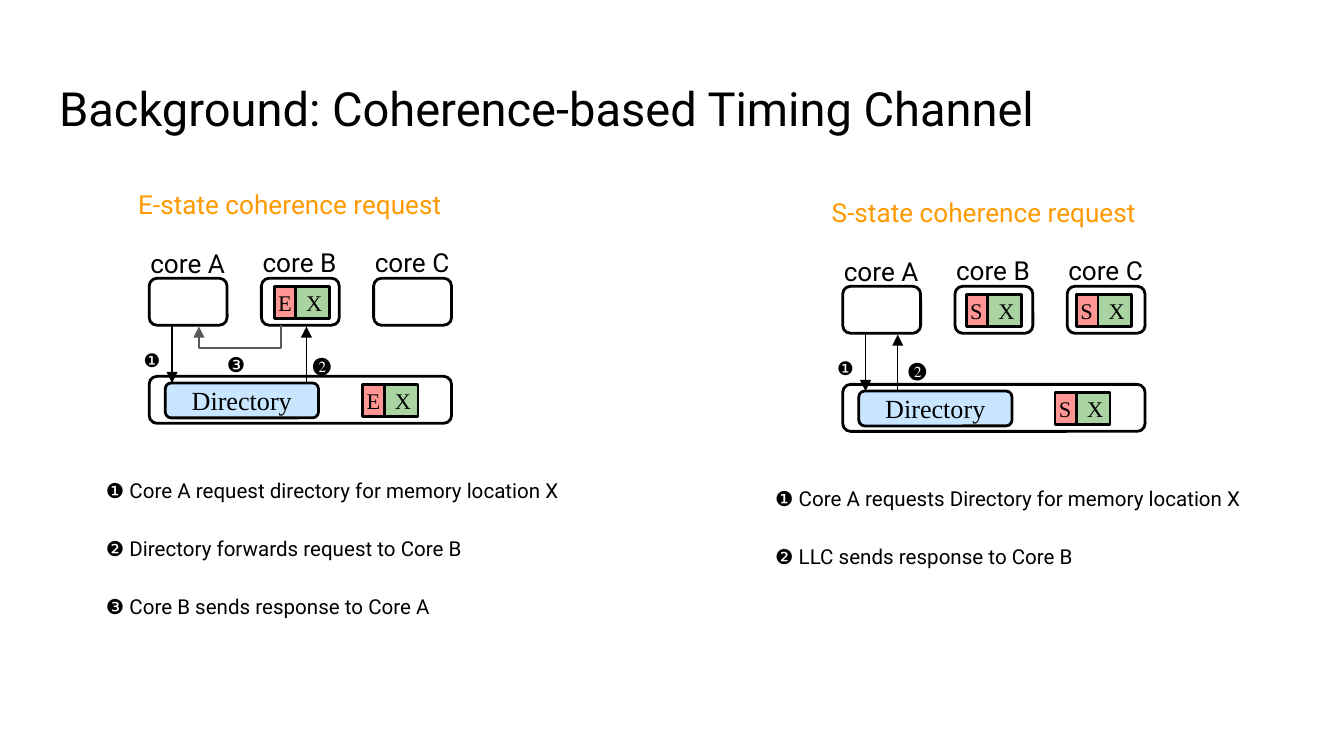
from lxml import etree
from pptx import Presentation
from pptx.dml.color import RGBColor
from pptx.enum import shapes, text
from pptx.oxml import ns
from pptx.util import Inches, Pt

BLACK = RGBColor(0x00, 0x00, 0x00)
GRAY = RGBColor(0x59, 0x59, 0x59)
ORANGE = RGBColor(0xFF, 0x99, 0x00)
RED = RGBColor(0xFF, 0x96, 0x94)
GREEN = RGBColor(0xA9, 0xD3, 0xA1)
BLUE = RGBColor(0xC8, 0xE6, 0xFF)
SANS, SERIF, BADGE = "Roboto", "Times New Roman", "Arial"
RECT = shapes.MSO_SHAPE.RECTANGLE
ROUND = shapes.MSO_SHAPE.ROUNDED_RECTANGLE

# Content; every place in a diagram is relative to its first core box
TITLE = "Background: Coherence-based Timing Channel"
CORES = ["core A", "core B", "core C"]
CORE_WIDTH, BOX_HEIGHT, LLC_WIDTH = 0.58, 0.35, 2.25
CORE_PITCH = (LLC_WIDTH - CORE_WIDTH) / 2
LLC_TOP, DIRECTORY_TOP = 0.73, 0.78
STEP_PITCH = 0.43
DIAGRAMS = [
    dict(
        origin=(1.11, 2.07), heading="E-state coherence request", state="E",
        cache_lines=[(0.93, 0.06), (1.59, 0.79)],
        response_x=1.17,
        badges=[("❶", -0.14, 0.40, 10, BADGE), ("❷", 1.12, 0.42, 11, SERIF),
                ("❸", 0.48, 0.42, 11, BADGE)],
        forward=[(0.98, 0.35), (0.98, 0.52), (0.37, 0.52), (0.37, 0.36)],
        steps_x=-0.42,
        steps=["❶ Core A request directory for memory location X",
               "❷ Directory forwards request to Core B",
               "❸ Core B sends response to Core A"],
    ),
    dict(
        origin=(6.27, 2.13), heading="S-state coherence request", state="S",
        cache_lines=[(0.92, 0.06), (1.58, 0.79), (1.74, 0.06)],
        response_x=0.41,
        badges=[("❶", -0.14, 0.40, 10, BADGE), ("❷", 0.39, 0.40, 11, SERIF)],
        forward=None,
        steps_x=-0.60,
        steps=["❶ Core A requests Directory for memory location X",
               "❷ LLC sends response to Core B"],
    ),
]

# A 16:9 slide
presentation = Presentation()
presentation.slide_width = Inches(10)
presentation.slide_height = Inches(10 * 9 / 16)
slide = presentation.slides.add_slide(presentation.slide_layouts[5])


def write(frame, words, size=14, font=SANS, color=BLACK, spacing=1.0,
          align=text.PP_ALIGN.LEFT, anchor=text.MSO_ANCHOR.TOP):
    frame.word_wrap = True
    frame.auto_size = text.MSO_AUTO_SIZE.NONE
    frame.vertical_anchor = anchor
    frame.margin_left = frame.margin_right = Inches(0.1)
    frame.margin_top = frame.margin_bottom = Inches(0.1)
    paragraph = frame.paragraphs[0]
    paragraph.alignment, paragraph.line_spacing = align, spacing
    run = paragraph.add_run()
    run.text = words
    run.font.size, run.font.name = Pt(size), font
    run.font.color.rgb = color


def add_label(words, x, y, width, height, **style):
    box = slide.shapes.add_textbox(*map(Inches, (x, y, width, height)))
    write(box.text_frame, words, **style)


def add_box(kind, x, y, width, height, fill=None):
    shape = slide.shapes.add_shape(kind, *map(Inches, (x, y, width, height)))
    shape.shadow.inherit = False
    if fill is None:
        shape.fill.background()
    else:
        shape.fill.solid()
        shape.fill.fore_color.rgb = fill
    shape.line.color.rgb, shape.line.width = BLACK, Pt(1.5)
    return shape


def style_arrow(shape, color):
    shape.line.color.rgb, shape.line.width = color, Pt(0.75)
    line = shape.line._get_or_add_ln()
    etree.SubElement(line, ns.qn("a:tailEnd"), type="triangle")


def add_arrow(x, start_y, end_y):
    arrow = slide.shapes.add_connector(
        shapes.MSO_CONNECTOR.STRAIGHT, *map(Inches, (x, start_y, x, end_y)))
    style_arrow(arrow, BLACK)
    etree.SubElement(arrow._element.spPr, ns.qn("a:effectLst"))


def add_bent_arrow(points):
    points = [(Inches(x), Inches(y)) for x, y in points]
    builder = slide.shapes.build_freeform(*points[0])
    builder.add_line_segments(points[1:], close=False)
    arrow = builder.convert_to_shape()
    arrow.shadow.inherit = False
    arrow.fill.background()
    style_arrow(arrow, GRAY)


def add_cache_line(state, x, y):
    add_box(RECT, x, y, 0.17, 0.24, RED)
    add_box(RECT, x + 0.16, y, 0.25, 0.24, GREEN)
    for words, offset in ((state, -0.07), ("X", 0.14)):
        add_label(words, x + offset, y - 0.08, 0.31, 0.4, size=12, font=SERIF)


def add_diagram(diagram):
    left, top = diagram["origin"]
    add_label(diagram["heading"], left - 0.18, top - 0.77, 2.92, 0.44, color=ORANGE)

    # Cores, last-level cache and directory
    for index, core in enumerate(CORES):
        x = left + index * CORE_PITCH
        add_box(ROUND, x, top, CORE_WIDTH, BOX_HEIGHT)
        label_y = top - (0.33 if index == 0 else 0.34)
        add_label(core, x - 0.09, label_y, 0.78, 0.44)
    add_box(ROUND, left, top + LLC_TOP, LLC_WIDTH, BOX_HEIGHT)
    directory = add_box(ROUND, left + 0.12, top + DIRECTORY_TOP, 1.14, 0.26, BLUE)
    write(directory.text_frame, "Directory", font=SERIF,
          align=text.PP_ALIGN.CENTER, anchor=text.MSO_ANCHOR.MIDDLE)
    for x, y in diagram["cache_lines"]:
        add_cache_line(diagram["state"], left + x, top + y)

    # Messages and their numbers
    add_arrow(left + 0.17, top + BOX_HEIGHT, top + DIRECTORY_TOP)
    add_arrow(left + diagram["response_x"], top + 0.77, top + 0.36)
    if diagram["forward"]:
        add_bent_arrow([(left + x, top + y) for x, y in diagram["forward"]])
    for number, x, y, size, font in diagram["badges"]:
        add_label(number, left + x, top + y, 0.25, 0.39,
                  size=size, font=font, spacing=1.15)

    # Explanation of the steps
    for index, step in enumerate(diagram["steps"]):
        add_label(step, left + diagram["steps_x"], top + 1.36 + index * STEP_PITCH,
                  4.0, 0.39, size=11, spacing=1.15)


# Title
title = slide.shapes.title
title.left, title.top, title.width, title.height = map(Inches, (0.34, 0.49, 9.32, 0.63))
write(title.text_frame, TITLE, size=25.2)

for diagram in DIAGRAMS:
    add_diagram(diagram)

presentation.save("out.pptx")
